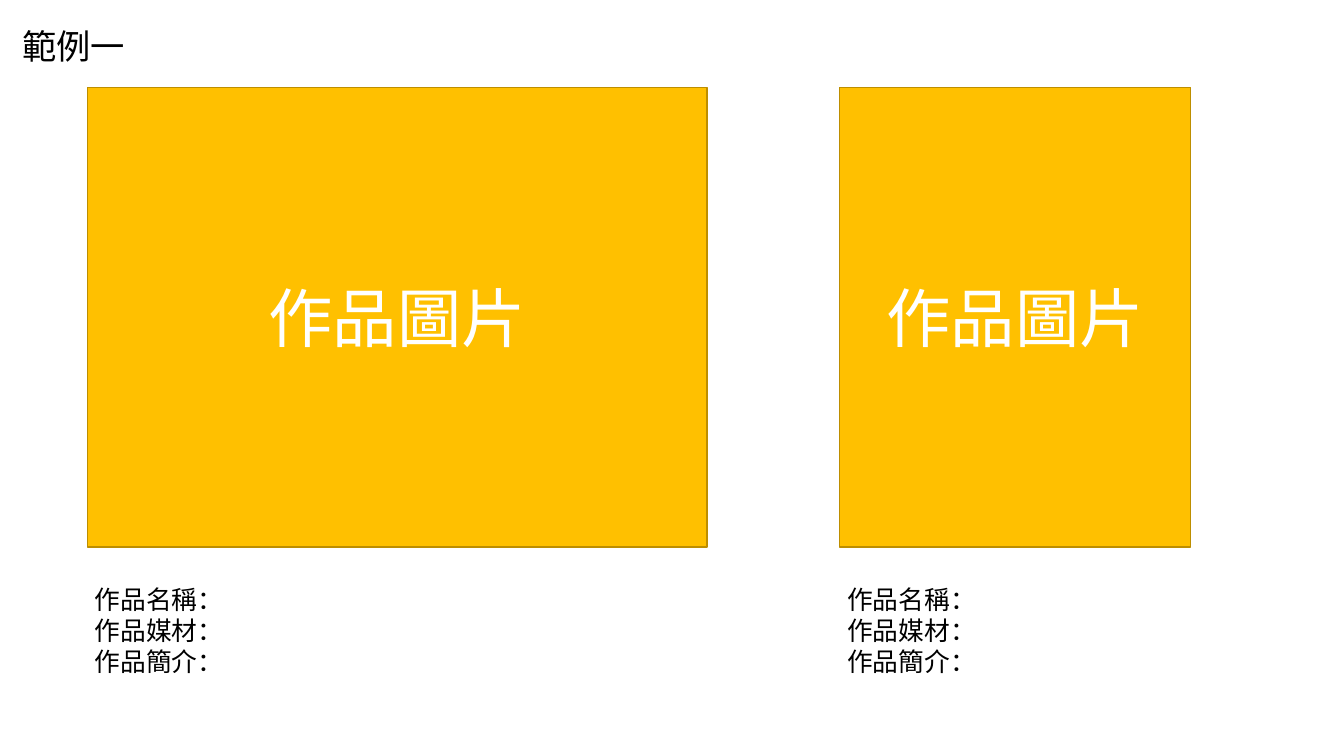
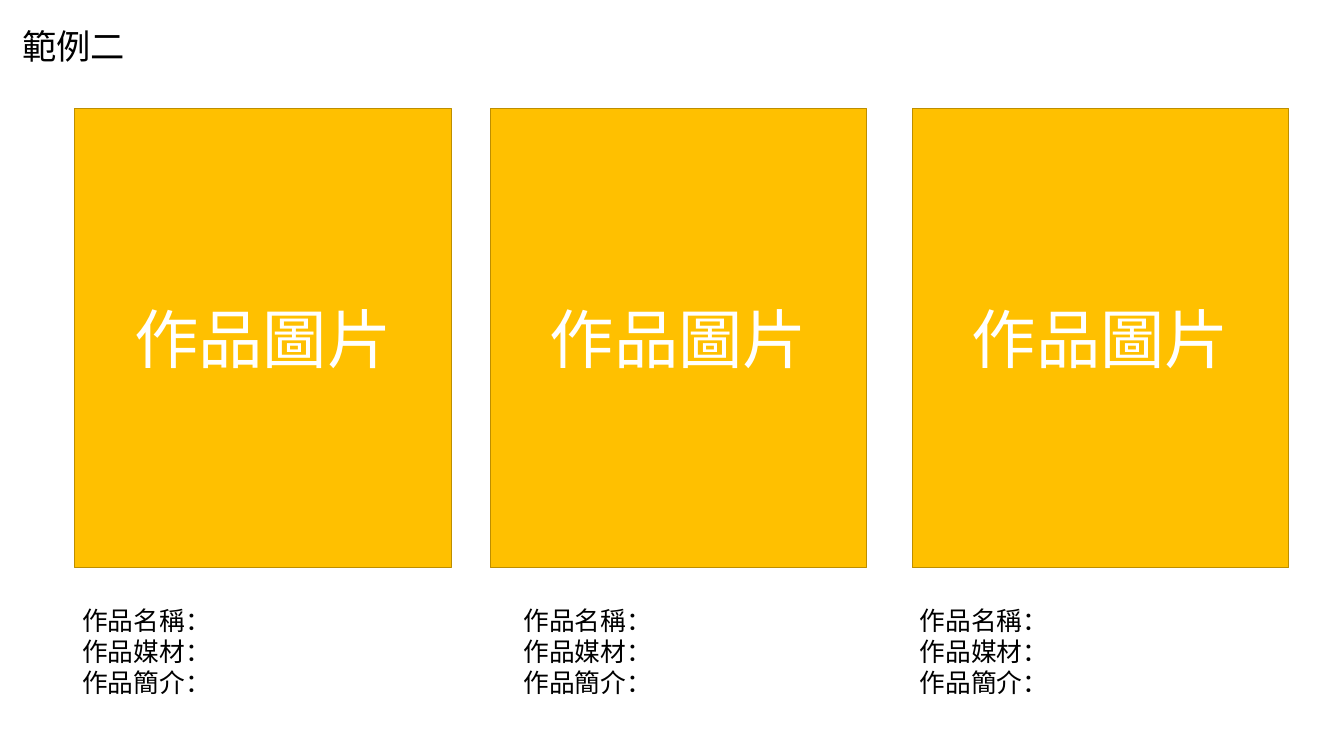
from dataclasses import dataclass

from lxml import etree
from pptx import Presentation
from pptx.dml.color import RGBColor
from pptx.enum.shapes import MSO_SHAPE
from pptx.enum.text import MSO_ANCHOR, MSO_AUTO_SIZE, PP_ALIGN
from pptx.oxml.ns import qn
from pptx.util import Cm, Pt

RECTANGLE = MSO_SHAPE.RECTANGLE
MIDDLE = MSO_ANCHOR.MIDDLE
FIT_SHAPE = MSO_AUTO_SIZE.SHAPE_TO_FIT_TEXT
LEFT, CENTER = PP_ALIGN.LEFT, PP_ALIGN.CENTER


@dataclass(frozen=True)
class Theme:
    font: str = "Noto Sans CJK SC"
    frame_fill: RGBColor = RGBColor(0xFF, 0xC0, 0x00)
    frame_line: RGBColor = RGBColor(0xBD, 0x8E, 0x00)
    frame_text: RGBColor = RGBColor(0xFF, 0xFF, 0xFF)
    text: RGBColor = RGBColor(0x00, 0x00, 0x00)
    title_size: Pt = Pt(32)
    frame_size: Pt = Pt(60)
    caption_size: Pt = Pt(24)


THEME = Theme()
FRAME_TEXT = "作品圖片"
CAPTION_LINES = ["作品名稱：", "作品媒材：", "作品簡介："]
FRAME_HEIGHT = 15.14
CAPTION_GAP = 1.09

# Lengths in cm; each artwork is (frame left, frame width, caption left).
SLIDES = [
    ("範例一", 2.87, [(2.87, 20.42, 2.87), (27.66, 11.56, 27.66)]),
    ("範例二", 3.56, [(2.46, 12.4, 2.46), (16.15, 12.4, 16.99), (30.05, 12.4, 30.05)]),
]


def write_lines(text_frame, lines, size, color, alignment=LEFT):
    """Fill the frame with one styled paragraph per line."""
    text_frame.text = "\n".join(lines)
    for paragraph in text_frame.paragraphs:
        paragraph.alignment = alignment
        paragraph.font.size = size
        paragraph.font.color.rgb = color
        paragraph.font.name = THEME.font
        # The East Asian typeface has no public setter.
        defaults = paragraph._p.pPr.find(qn("a:defRPr"))
        etree.SubElement(defaults, qn("a:ea"), typeface=THEME.font)


def add_label(slide, left, top, width, height, lines, size):
    label = slide.shapes.add_textbox(Cm(left), Cm(top), Cm(width), Cm(height))
    label.text_frame.word_wrap = False
    label.text_frame.auto_size = FIT_SHAPE
    write_lines(label.text_frame, lines, size, THEME.text)


presentation = Presentation()
presentation.slide_width = Cm(44.27)
presentation.slide_height = Cm(24.89)
blank_layout = presentation.slide_layouts[6]

for title, frame_top, artworks in SLIDES:
    slide = presentation.slides.add_slide(blank_layout)
    add_label(slide, 0.48, 0.71, 3.94, 1.63, [title], THEME.title_size)
    caption_top = frame_top + FRAME_HEIGHT + CAPTION_GAP

    for frame_left, frame_width, caption_left in artworks:
        frame = slide.shapes.add_shape(
            RECTANGLE, Cm(frame_left), Cm(frame_top), Cm(frame_width), Cm(FRAME_HEIGHT)
        )
        frame.shadow.inherit = False
        frame.fill.solid()
        frame.fill.fore_color.rgb = THEME.frame_fill
        frame.line.color.rgb = THEME.frame_line
        frame.line.width = Pt(1)
        frame.text_frame.vertical_anchor = MIDDLE
        write_lines(
            frame.text_frame, [FRAME_TEXT], THEME.frame_size, THEME.frame_text, CENTER
        )
        add_label(
            slide, caption_left, caption_top, 4.78, 3.33, CAPTION_LINES, THEME.caption_size
        )

presentation.save("out.pptx")
